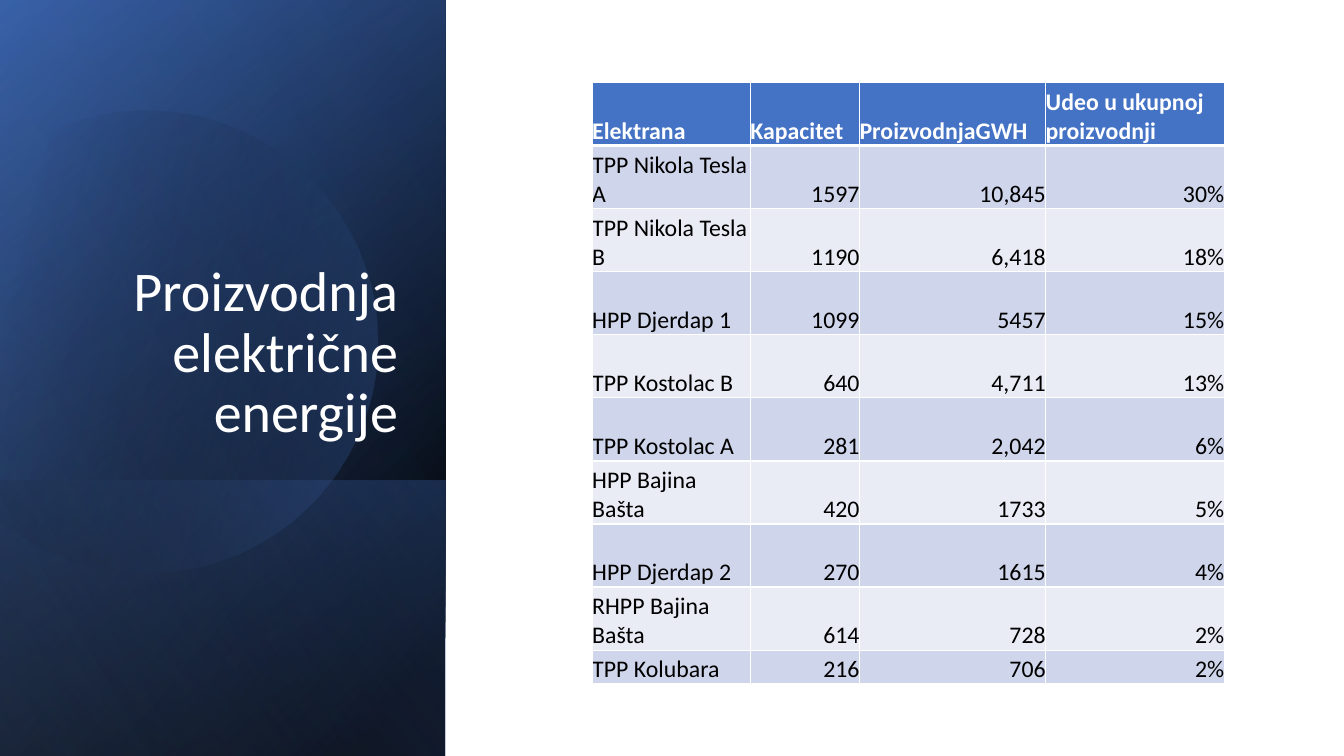
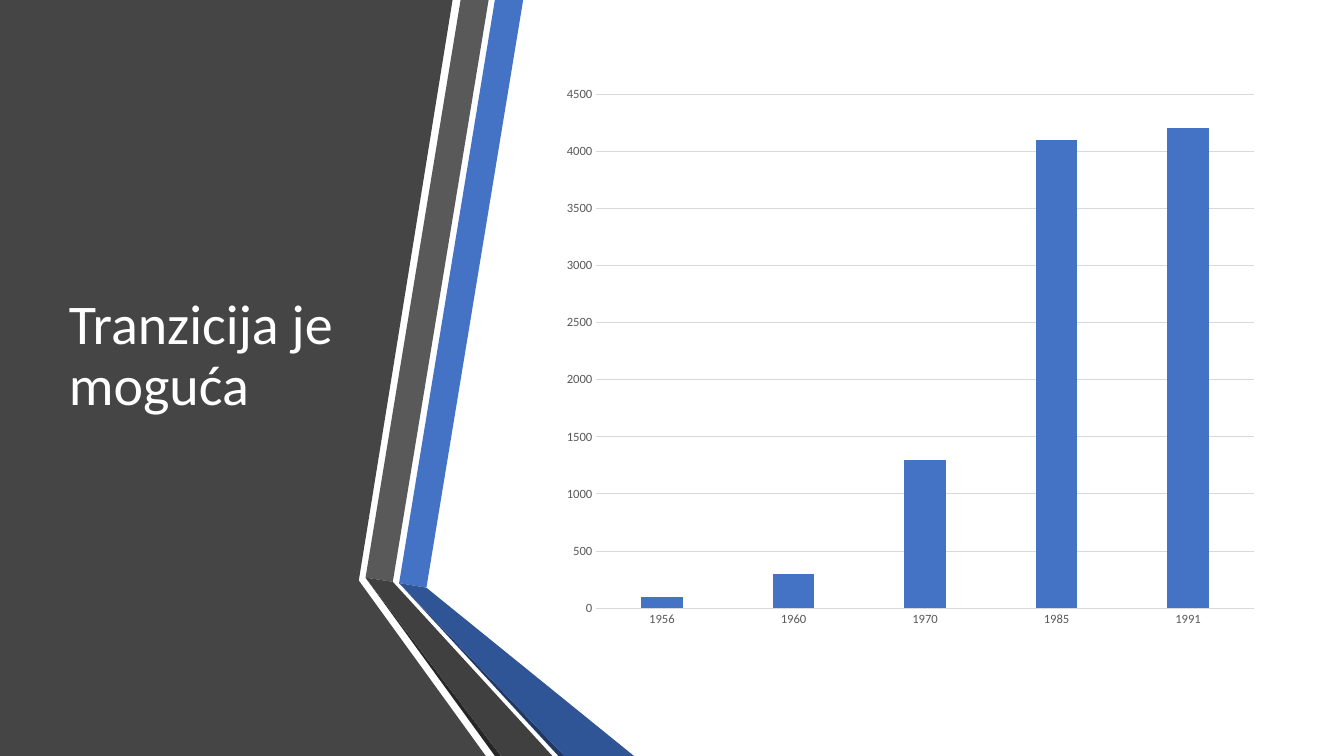
from pptx import Presentation
from pptx.chart.data import CategoryChartData
from pptx.dml.color import RGBColor
from pptx.enum.chart import XL_CHART_TYPE, XL_TICK_MARK
from pptx.enum.shapes import MSO_SHAPE
from pptx.enum.text import MSO_ANCHOR, PP_ALIGN
from pptx.oxml import parse_xml
from pptx.oxml.ns import nsdecls, qn
from pptx.util import Pt

WHITE = RGBColor(0xFF, 0xFF, 0xFF)
BLACK = RGBColor(0x00, 0x00, 0x00)
BLUE = RGBColor(0x44, 0x72, 0xC4)
DARK_BLUE = RGBColor(0x2F, 0x55, 0x97)
LIGHT_BLUE = RGBColor(0x8F, 0xAA, 0xDC)
NAVY = RGBColor(0x20, 0x38, 0x64)
BAND_DARK = RGBColor(0xCF, 0xD5, 0xEA)
BAND_LIGHT = RGBColor(0xE9, 0xEB, 0xF5)
PANEL_GRAY = RGBColor(0x45, 0x45, 0x45)
STRIPE_GRAY = RGBColor(0x59, 0x59, 0x59)
FOLD_GRAY = RGBColor(0x40, 0x40, 0x40)
SHADE_GRAY = RGBColor(0x26, 0x26, 0x26)
GRID_GRAY = RGBColor(0xD9, 0xD9, 0xD9)
FONT = "Calibri"
WIDTH, HEIGHT = 960, 540


def add_polygon(shapes, points, color):
    corners = [(Pt(x), Pt(y)) for x, y in points]
    builder = shapes.build_freeform(*corners[0])
    builder.add_line_segments(corners[1:], close=True)
    shape = builder.convert_to_shape()
    shape.shadow.inherit = False
    shape.fill.solid()
    shape.fill.fore_color.rgb = color
    shape.line.fill.background()


def set_gradient(shape, stops, angle):
    """Fill with (position, colour, opacity) stops, in percent; angle is clockwise in degrees."""
    stop_list = "".join(
        f'<a:gs pos="{position * 1000}"><a:srgbClr val="{color}">'
        f'<a:alpha val="{opacity * 1000}"/></a:srgbClr></a:gs>'
        for position, color, opacity in stops)
    gradient = parse_xml(
        f'<a:gradFill {nsdecls("a")} rotWithShape="1"><a:gsLst>{stop_list}</a:gsLst>'
        f'<a:lin ang="{angle * 60000}" scaled="0"/></a:gradFill>')
    shape.fill.background()
    properties = shape._element.spPr
    properties.replace(properties.find(qn("a:noFill")), gradient)


presentation = Presentation()
presentation.slide_width = Pt(WIDTH)
presentation.slide_height = Pt(HEIGHT)
blank_layout = presentation.slide_layouts[6]

# Production slide: gradient panel
production_slide = presentation.slides.add_slide(blank_layout)
PANEL_WIDTH = 318.2
LOWER_HEIGHT = 197
# Panel layers lie on their side and are turned upright about their centre
full_box, lower_box = [
    ((PANEL_WIDTH - height) / 2, HEIGHT - (height + PANEL_WIDTH) / 2, height, PANEL_WIDTH)
    for height in (HEIGHT, LOWER_HEIGHT)]
disc_box = (-60.6, 78.7, 330, 330)

# Shape, box, rotation, gradient stops, gradient angle
layers = [
    (MSO_SHAPE.RECTANGLE, full_box, 90, [(8, BLACK, 100), (100, DARK_BLUE, 100)], 50),
    (MSO_SHAPE.RECTANGLE, full_box, 90, [(0, BLACK, 0), (99, BLUE, 46)], 30),
    (MSO_SHAPE.RECTANGLE, lower_box, 90, [(2, BLUE, 29), (100, BLACK, 30)], 130),
    (MSO_SHAPE.OVAL, disc_box, 343.9, [(29, BLACK, 0), (100, BLUE, 43)], 30),
    (MSO_SHAPE.RECTANGLE, full_box, 90, [(0, BLACK, 0), (99, LIGHT_BLUE, 11)], 120),
]
for shape_type, box, rotation, stops, angle in layers:
    layer = production_slide.shapes.add_shape(shape_type, *[Pt(length) for length in box])
    layer.rotation = rotation
    if shape_type == MSO_SHAPE.RECTANGLE:
        layer._element.spPr.find(qn("a:xfrm")).set("flipH", "1")
    layer.shadow.inherit = False
    layer.line.fill.background()
    set_gradient(layer, stops, angle)

# Production slide: table
rows = [
    ("Elektrana", "Kapacitet", "ProizvodnjaGWH", "Udeo u ukupnoj proizvodnji"),
    ("TPP Nikola Tesla A", "1597", "10,845", "30%"),
    ("TPP Nikola Tesla B", "1190", "6,418", "18%"),
    ("HPP Djerdap 1", "1099", "5457", "15%"),
    ("TPP Kostolac B", "640", "4,711", "13%"),
    ("TPP Kostolac A", "281", "2,042", "6%"),
    ("HPP Bajina Bašta", "420", "1733", "5%"),
    ("HPP Djerdap 2", "270", "1615", "4%"),
    ("RHPP Bajina Bašta", "614", "728", "2%"),
    ("TPP Kolubara", "216", "706", "2%"),
]
column_widths = [113, 78, 133, 127.5]
row_heights = [45.05] * (len(rows) - 1) + [24.2]
table = production_slide.shapes.add_table(
    len(rows), len(column_widths), Pt(423), Pt(59),
    Pt(sum(column_widths)), Pt(sum(row_heights))).table
for column, width in zip(table.columns, column_widths):
    column.width = Pt(width)
for row, height in zip(table.rows, row_heights):
    row.height = Pt(height)

for row_index, values in enumerate(rows):
    is_header = row_index == 0
    border_widths = {"L": 1, "R": 1, "T": 3 if row_index == 1 else 1, "B": 3 if is_header else 1}
    for column_index, value in enumerate(values):
        cell = table.cell(row_index, column_index)
        cell.text_frame.text = value
        cell.vertical_anchor = MSO_ANCHOR.BOTTOM
        cell.margin_left = cell.margin_right = cell.margin_top = cell.margin_bottom = 0
        for side, width in border_widths.items():
            cell._tc.get_or_add_tcPr().append(parse_xml(
                f'<a:ln{side} {nsdecls("a")} w="{Pt(width)}"><a:solidFill>'
                f'<a:srgbClr val="{WHITE}"/></a:solidFill></a:ln{side}>'))
        cell.fill.solid()
        band = BAND_DARK if row_index % 2 else BAND_LIGHT
        cell.fill.fore_color.rgb = BLUE if is_header else band
        paragraph = cell.text_frame.paragraphs[0]
        is_number = column_index > 0 and not is_header
        paragraph.alignment = PP_ALIGN.RIGHT if is_number else PP_ALIGN.LEFT
        font = paragraph.runs[0].font
        font.name = FONT
        font.size = Pt(17)
        font.bold = is_header
        font.color.rgb = WHITE if is_header else BLACK

# Transition slide: folded ribbons
transition_slide = presentation.slides.add_slide(blank_layout)
add_polygon(transition_slide.shapes,
            [(0, 0), (323.3, 0), (256.3, 414.7), (347, HEIGHT), (0, HEIGHT)], PANEL_GRAY)

blue_left, blue_right = (285.1, 416.5), (304.6, 419.8)
gray_left, gray_right = (261.1, 412.6), (280.6, 415.6)
ribbons = [
    ([blue_left, blue_right, (373.7, 0), (353.5, 0)], BLUE),
    ([gray_left, gray_right, (349, 0), (329, 0)], STRIPE_GRAY),
    ([gray_left, (353.5, HEIGHT), (357.8, HEIGHT)], SHADE_GRAY),
    ([blue_left, (398.9, HEIGHT), (403.2, HEIGHT)], NAVY),
    ([blue_left, (403.2, HEIGHT), (452.9, HEIGHT), blue_right], DARK_BLUE),
    ([gray_left, (357.8, HEIGHT), (394.6, HEIGHT), gray_right], FOLD_GRAY),
]
ribbon_group = transition_slide.shapes.add_group_shape()
for points, color in ribbons:
    add_polygon(ribbon_group.shapes, points, color)

# Transition slide: chart
chart_data = CategoryChartData()
chart_data.categories = ["1956", "1960", "1970", "1985", "1991"]
chart_data.add_series("Series 1", [100, 300, 1300, 4100, 4200])
chart = transition_slide.shapes.add_chart(
    XL_CHART_TYPE.COLUMN_CLUSTERED, Pt(394.6), Pt(54), Pt(511.2), Pt(401.8), chart_data).chart
chart.has_title = False
chart.has_legend = False
chart.font.name = FONT
chart.font.size = Pt(10)
plot = chart.plots[0]
plot.vary_by_categories = False
plot.gap_width = 219
plot.overlap = -27
columns_fill = plot.series[0].format.fill
columns_fill.solid()
columns_fill.fore_color.rgb = BLUE

value_axis, category_axis = chart.value_axis, chart.category_axis
for axis in (value_axis, category_axis):
    axis.major_tick_mark = XL_TICK_MARK.NONE
    axis.minor_tick_mark = XL_TICK_MARK.NONE
    axis.tick_labels.font.name = FONT
    axis.tick_labels.font.size = Pt(9)
    axis.tick_labels.font.color.rgb = STRIPE_GRAY
value_axis.minimum_scale = 0
value_axis.maximum_scale = 4500
value_axis.major_unit = 500
value_axis.format.line.fill.background()
for line in (value_axis.major_gridlines.format.line, category_axis.format.line):
    line.color.rgb = GRID_GRAY
    line.width = Pt(0.75)

# Titles of both slides
titles = [
    (production_slide, "Proizvodnja električne energije", (45.8, 132.8, 245.5, 188.6),
     MSO_ANCHOR.BOTTOM, PP_ALIGN.RIGHT),
    (transition_slide, "Tranzicija je moguća", (42.2, 54, 219, 401.8),
     MSO_ANCHOR.MIDDLE, PP_ALIGN.LEFT),
]
for slide, text, box, anchor, alignment in titles:
    text_frame = slide.shapes.add_textbox(*[Pt(length) for length in box]).text_frame
    text_frame.word_wrap = True
    text_frame.vertical_anchor = anchor
    text_frame.text = text
    paragraph = text_frame.paragraphs[0]
    paragraph.alignment = alignment
    paragraph.line_spacing = 0.9
    font = paragraph.runs[0].font
    font.name = FONT
    font.size = Pt(40)
    font.color.rgb = WHITE

presentation.save("out.pptx")
